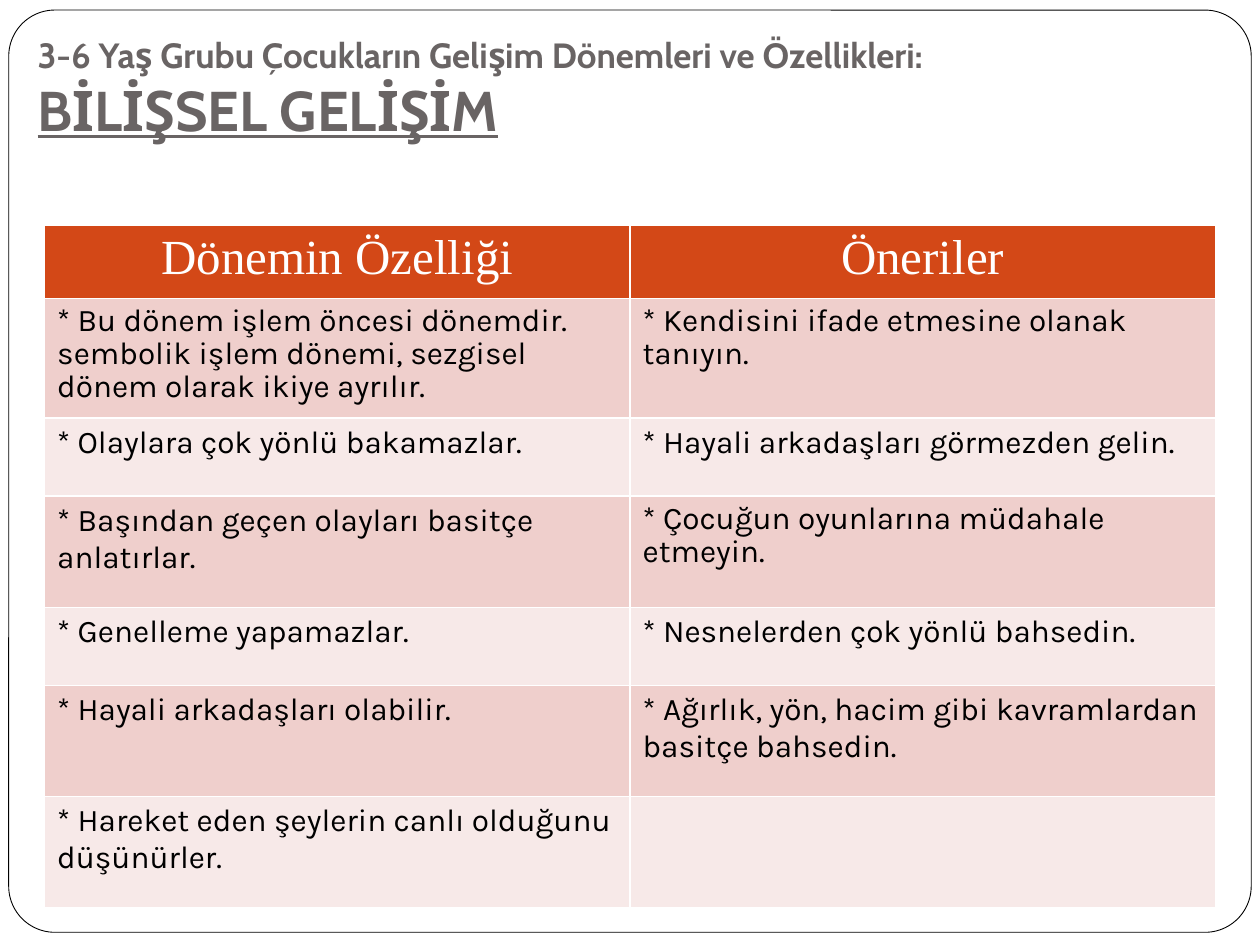
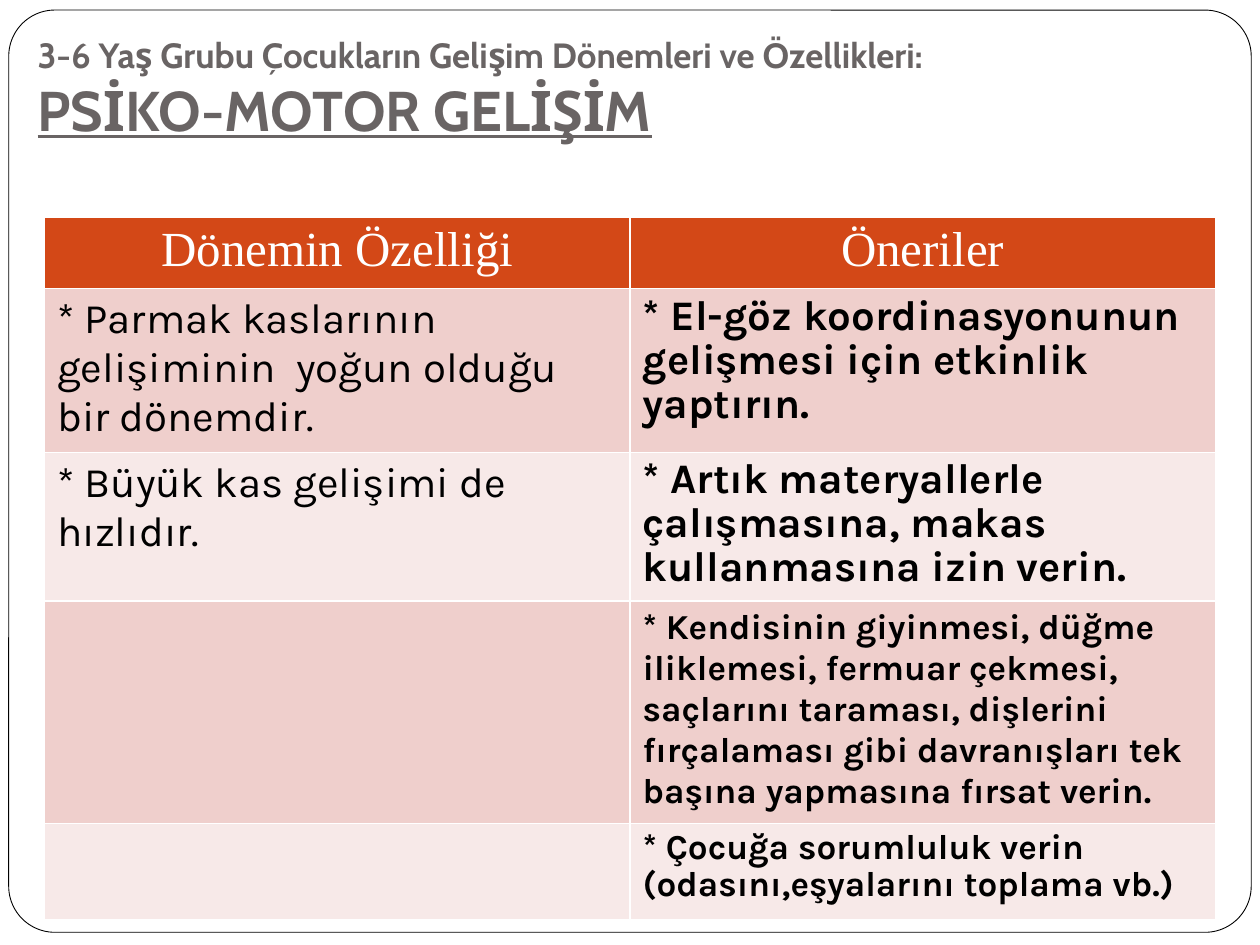
"""Build two slides on the developmental stages of children aged three to six."""
from dataclasses import dataclass

from lxml import etree
from pptx import Presentation
from pptx.dml.color import RGBColor
from pptx.enum import shapes, text
from pptx.oxml import ns
from pptx.util import Pt


@dataclass(frozen=True)
class Theme:
    white: str = "FFFFFF"
    black: str = "000000"
    title: str = "696464"
    header: str = "D34817"
    bands: tuple[str, str] = ("EFCFCC", "F7E9E8")
    title_font: str = "Cabin"
    header_font: str = "Times New Roman"
    body_font: str = "Karla"
    overline_size: float = 20
    title_size: float = 32
    header_size: float = 28
    small: float = 18
    medium: float = 20
    large: float = 24
    tight: float = 0.9


@dataclass(frozen=True)
class Entry:
    lines: tuple[str, ...] = ()
    size: float = 18
    bold: bool = False
    spacing: float | None = None


@dataclass(frozen=True)
class Row:
    height: float
    feature: Entry
    advice: Entry = Entry()


@dataclass(frozen=True)
class Stage:
    title: str
    table_top: float
    header_height: float
    rows: tuple[Row, ...]


THEME = Theme()
OVERLINE = "3-6 Yaş Grubu Çocukların Gelişim Dönemleri ve Özellikleri:"
HEADINGS = ("Dönemin Özelliği", "Öneriler")
TABLE_LEFT, COLUMN_WIDTH = 25.5, 334.5


def plain(*lines: str, size: float = THEME.small) -> Entry:
    """Return an entry with normal line spacing."""
    return Entry(lines, size)


def tight(*lines: str, size: float = THEME.small, bold: bool = False) -> Entry:
    """Return an entry with reduced line spacing."""
    return Entry(lines, size, bold, THEME.tight)


STAGES = (
    Stage("BİLİŞSEL GELİŞİM", 128.5, 42, (
        Row(68.5, tight("* Bu dönem işlem öncesi dönemdir.",
                        "sembolik işlem dönemi, sezgisel",
                        "dönem olarak ikiye ayrılır."),
            tight("* Kendisini ifade etmesine olanak tanıyın.")),
        Row(44.6, plain("* Olaylara çok yönlü bakamazlar."),
            plain("* Hayali arkadaşları görmezden gelin.")),
        Row(63.5, plain("* Başından geçen olayları basitçe anlatırlar."),
            tight("* Çocuğun oyunlarına müdahale etmeyin.")),
        Row(44.6, plain("* Genelleme yapamazlar."),
            plain("* Nesnelerden çok yönlü bahsedin.")),
        Row(63.5, plain("* Hayali arkadaşları olabilir."),
            plain("* Ağırlık, yön, hacim gibi kavramlardan basitçe bahsedin.")),
        Row(63.5, plain("* Hareket eden şeylerin canlı olduğunu düşünürler.")),
    )),
    Stage("PSİKO-MOTOR GELİŞİM", 124, 37.5, (
        Row(86.4, plain("* Parmak kaslarının gelişiminin  yoğun olduğu bir dönemdir.",
                        size=THEME.large),
            tight("* El-göz koordinasyonunun", "gelişmesi için etkinlik yaptırın.",
                  size=THEME.large, bold=True)),
        Row(78.5, plain("* Büyük kas gelişimi de hızlıdır.", size=THEME.large),
            tight("* Artık materyallerle çalışmasına, makas kullanmasına izin verin.",
                  size=THEME.large, bold=True)),
        Row(117.4, Entry(),
            Entry(("* Kendisinin giyinmesi, düğme iliklemesi, fermuar çekmesi, "
                   "saçlarını taraması, dişlerini fırçalaması gibi davranışları tek "
                   "başına yapmasına fırsat verin.",), THEME.medium, True)),
        Row(54.7, Entry(),
            tight("* Çocuğa sorumluluk verin", "(odasını,eşyalarını toplama vb.)",
                  size=THEME.medium, bold=True)),
    )),
)


def add_run(paragraph, words: str, font: str, size: float, color: str,
            bold: bool = False, underline: bool = False) -> None:
    """Add one formatted run to a paragraph."""
    run = paragraph.add_run()
    run.text = words
    run.font.name = font
    run.font.size = Pt(size)
    run.font.bold = bold
    run.font.underline = underline
    run.font.color.rgb = RGBColor.from_string(color)


def add_frame(slide) -> None:
    """Draw the rounded frame around the slide."""
    frame = slide.shapes.add_shape(shapes.MSO_SHAPE.ROUNDED_RECTANGLE,
                                   Pt(5), Pt(5.75), Pt(710), Pt(527))
    frame.adjustments[0] = 0.05
    frame.shadow.inherit = False
    frame.fill.solid()
    frame.fill.fore_color.rgb = RGBColor.from_string(THEME.white)
    frame.line.color.rgb = RGBColor.from_string(THEME.black)
    frame.line.width = Pt(0.5)


def add_title(slide, title: str) -> None:
    """Write the shared first line and the underlined stage name."""
    box = slide.shapes.add_textbox(Pt(14.4), Pt(3.6), Pt(705.6), Pt(85))
    frame = box.text_frame
    frame.word_wrap = True
    frame.vertical_anchor = text.MSO_ANCHOR.BOTTOM
    frame.margin_bottom = Pt(7.2)
    paragraph = frame.paragraphs[0]
    add_run(paragraph, OVERLINE, THEME.title_font, THEME.overline_size, THEME.title, bold=True)
    paragraph.add_line_break()
    add_run(paragraph, title, THEME.title_font, THEME.title_size, THEME.title,
            bold=True, underline=True)


def style_cell(cell, fill: str) -> None:
    """Give a cell white borders and a solid fill."""
    properties = cell._tc.get_or_add_tcPr()
    for side in ("lnL", "lnR", "lnT", "lnB"):
        line = etree.SubElement(properties, ns.qn(f"a:{side}"), w=str(Pt(1)))
        solid = etree.SubElement(line, ns.qn("a:solidFill"))
        etree.SubElement(solid, ns.qn("a:srgbClr"), val=THEME.white)
    cell.fill.solid()
    cell.fill.fore_color.rgb = RGBColor.from_string(fill)


def write_entry(cell, entry: Entry) -> None:
    """Write each line of an entry as a paragraph."""
    frame = cell.text_frame
    for index, line in enumerate(entry.lines):
        paragraph = frame.add_paragraph() if index else frame.paragraphs[0]
        if entry.spacing:
            paragraph.line_spacing = entry.spacing
        add_run(paragraph, line, THEME.body_font, entry.size, THEME.black, entry.bold)


def add_stage_table(slide, stage: Stage) -> None:
    """Add the table of features and advice."""
    heights = [stage.header_height, *(row.height for row in stage.rows)]
    table = slide.shapes.add_table(
        len(heights), len(HEADINGS), Pt(TABLE_LEFT), Pt(stage.table_top),
        Pt(COLUMN_WIDTH * len(HEADINGS)), Pt(sum(heights))).table
    table.horz_banding = False
    for table_row, height in zip(table.rows, heights):
        table_row.height = Pt(height)
    for column, heading in enumerate(HEADINGS):
        table.columns[column].width = Pt(COLUMN_WIDTH)
        cell = table.cell(0, column)
        style_cell(cell, THEME.header)
        paragraph = cell.text_frame.paragraphs[0]
        paragraph.alignment = text.PP_ALIGN.CENTER
        add_run(paragraph, heading, THEME.header_font, THEME.header_size, THEME.white)
    for index, row in enumerate(stage.rows):
        for column, entry in enumerate((row.feature, row.advice)):
            cell = table.cell(index + 1, column)
            style_cell(cell, THEME.bands[index % 2])
            write_entry(cell, entry)


def main() -> None:
    """Build and save the presentation."""
    presentation = Presentation()
    presentation.slide_width, presentation.slide_height = Pt(720), Pt(540)
    for stage in STAGES:
        slide = presentation.slides.add_slide(presentation.slide_layouts[6])
        add_frame(slide)
        add_title(slide, stage.title)
        add_stage_table(slide, stage)
    presentation.save("out.pptx")


if __name__ == "__main__":
    main()
